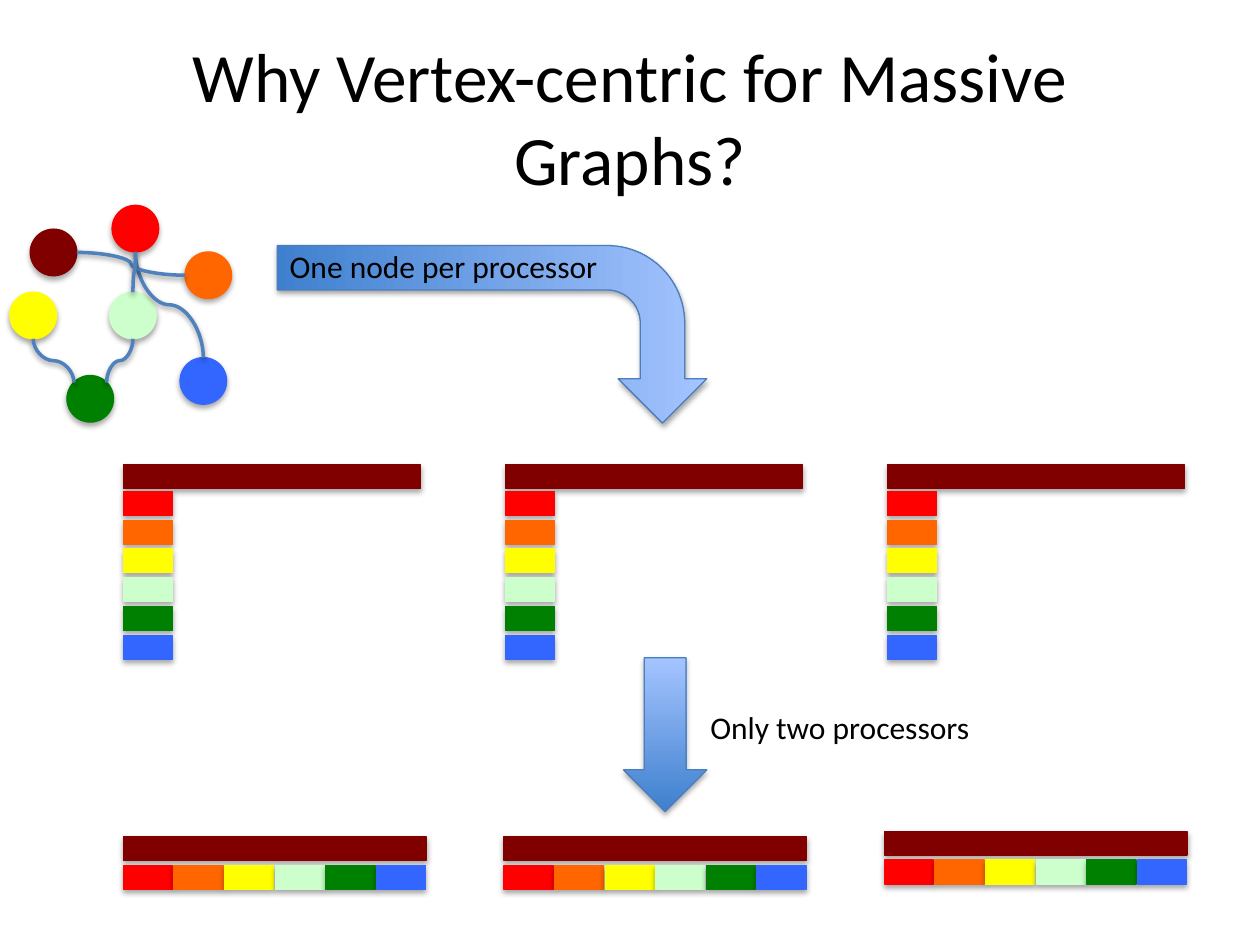
from lxml.etree import SubElement
from pptx import Presentation
from pptx.dml.color import RGBColor
from pptx.enum.shapes import MSO_CONNECTOR, MSO_SHAPE as SHP
from pptx.enum.text import MSO_ANCHOR, PP_ALIGN
from pptx.oxml.ns import qn
from pptx.util import Cm, Pt

MAROON, RED, ORANGE, YELLOW = "800000", "FF0000", "FF6600", "FFFF00"
MINT, GREEN, BLUE = "CCFFCC", "008000", "3366FF"
CELLS = [RED, ORANGE, YELLOW, MINT, GREEN, BLUE]
TOP, BOTTOM, LEFT, RIGHT = (0.5, 0), (0.5, 1), (0, 0.5), (1, 0.5)
TOP_LEFT, TOP_RIGHT = (0.15, 0.15), (0.85, 0.15)
NODE = 0.94
NODES = {
    MAROON: (0.61, 4.62),
    YELLOW: (0.2, 5.89),
    RED: (2.26, 4.14),
    GREEN: (1.35, 7.57),
    MINT: (2.21, 5.89),
    ORANGE: (3.73, 5.08),
    BLUE: (3.63, 7.21),
}
EDGES = [
    (YELLOW, BOTTOM, GREEN, TOP_LEFT),
    (MINT, BOTTOM, GREEN, TOP_RIGHT),
    (RED, BOTTOM, BLUE, TOP),
    (ORANGE, LEFT, MAROON, RIGHT),
    (RED, BOTTOM, MINT, TOP),
]


def rgb(value):
    return RGBColor.from_string(value)


class Deck:
    """Holds the style and the current slide, and draws each kind of element."""

    font, ink, edge, arrow_edge = "Calibri", "000000", "4F81BD", "4B7EBC"
    gradient = ("3F80CE", "A4C4FF")
    bar_h, cell_w, pitch = 0.48, 0.99, 0.58

    def __init__(self, prs):
        self.s = prs.slides.add_slide(prs.slide_layouts[6])

    def shadow(self, sp, dist, alpha):
        effects = SubElement(sp._element.spPr, qn("a:effectLst"))
        outer = SubElement(effects, qn("a:outerShdw"), blurRad="40000", dist=str(dist),
                           dir="5400000", rotWithShape="0")
        color = SubElement(outer, qn("a:srgbClr"), val="000000")
        SubElement(color, qn("a:alpha"), val=str(alpha * 1000))

    def shape(self, parent, kind, x, y, w, h, color=None):
        sp = parent.shapes.add_shape(kind, Cm(x), Cm(y), Cm(w), Cm(h))
        if color:
            sp.fill.solid()
            sp.fill.fore_color.rgb = rgb(color)
        else:
            sp.fill.gradient()
            sp.fill.gradient_angle = 90
            for stop, value in zip(sp.fill.gradient_stops, self.gradient):
                stop.color.rgb = rgb(value)
        sp.line.color.rgb = rgb(color or self.arrow_edge)
        sp.line.width = Pt(0.75)
        self.shadow(sp, 23000, 35)
        return sp

    def text(self, parent, text, x, y, w, h, size, wrap=False):
        sp = parent.shapes.add_textbox(Cm(x), Cm(y), Cm(w), Cm(h))
        tf = sp.text_frame
        tf.text = text
        tf.word_wrap = wrap
        r = tf.paragraphs[0].runs[0]
        r.font.name, r.font.size = self.font, Pt(size)
        r.font.color.rgb = rgb(self.ink)
        return tf

    def title(self, text):
        tf = self.text(self.s, text, 1.27, 0.76, 22.86, 3.18, 39.6, wrap=True)
        tf.vertical_anchor = MSO_ANCHOR.MIDDLE
        tf.paragraphs[0].alignment = PP_ALIGN.CENTER

    def curve(self, x1, y1, x2, y2, vertical):
        if vertical:
            cx, cy, dx, dy = (x1 + x2) / 2, (y1 + y2) / 2, x2 - x1, y2 - y1
            x1, y1, x2, y2 = cx - dy / 2, cy + dx / 2, cx + dy / 2, cy - dx / 2
        cxn = self.s.shapes.add_connector(MSO_CONNECTOR.CURVE, Cm(x1), Cm(y1), Cm(x2), Cm(y2))
        if vertical:
            cxn._element.spPr.find(qn("a:xfrm")).set("rot", "5400000")
        cxn.line.color.rgb = rgb(self.edge)
        cxn.line.width = Pt(2)
        self.shadow(cxn, 20000, 38)

    def graph(self):
        for color, (x, y) in NODES.items():
            self.shape(self.s, SHP.OVAL, x, y, NODE, NODE, color)
        for start, (fx, fy), end, (gx, gy) in EDGES:
            (x1, y1), (x2, y2) = NODES[start], NODES[end]
            self.curve(x1 + fx * NODE, y1 + fy * NODE, x2 + gx * NODE, y2 + gy * NODE,
                       (fx, fy) == BOTTOM)

    def bars(self, x, y, width, first, dx, dy):
        grp = self.s.shapes.add_group_shape()
        self.shape(grp, SHP.RECTANGLE, x, y, width, self.bar_h, MAROON)
        for i, color in enumerate(CELLS):
            self.shape(grp, SHP.RECTANGLE, x + i * dx, y + first + i * dy,
                       self.cell_w, self.bar_h, color)

    def arrow(self, kind, box, label, label_box, rotation=0):
        grp = self.s.shapes.add_group_shape()
        self.shape(grp, kind, *box).rotation = rotation
        self.text(grp, label, *label_box, 18)


def main():
    prs = Presentation()
    prs.slide_width, prs.slide_height = Cm(25.4), Cm(19.05)
    deck = Deck(prs)
    deck.title("Why Vertex-centric for Massive Graphs?")
    deck.graph()
    for i in range(3):
        deck.bars(2.49 + 7.7 * i, 9.37, 5.99, 0.54, 0, deck.pitch)
    for i, y in enumerate([16.87, 16.87, 16.76]):
        deck.bars(2.49 + 7.67 * i, y, 6.1, deck.pitch, 1.02, 0)
    deck.arrow(SHP.BENT_ARROW, (8.13, 2.41, 3.58, 8.66),
               "One node per processor", (5.59, 4.85, 6.78, 1.02), 90)
    deck.arrow(SHP.DOWN_ARROW, (12.57, 13.26, 1.68, 3.1),
               "Only two processors", (14.07, 14.15, 5.82, 1.02))
    prs.save("out.pptx")


if __name__ == "__main__":
    main()
